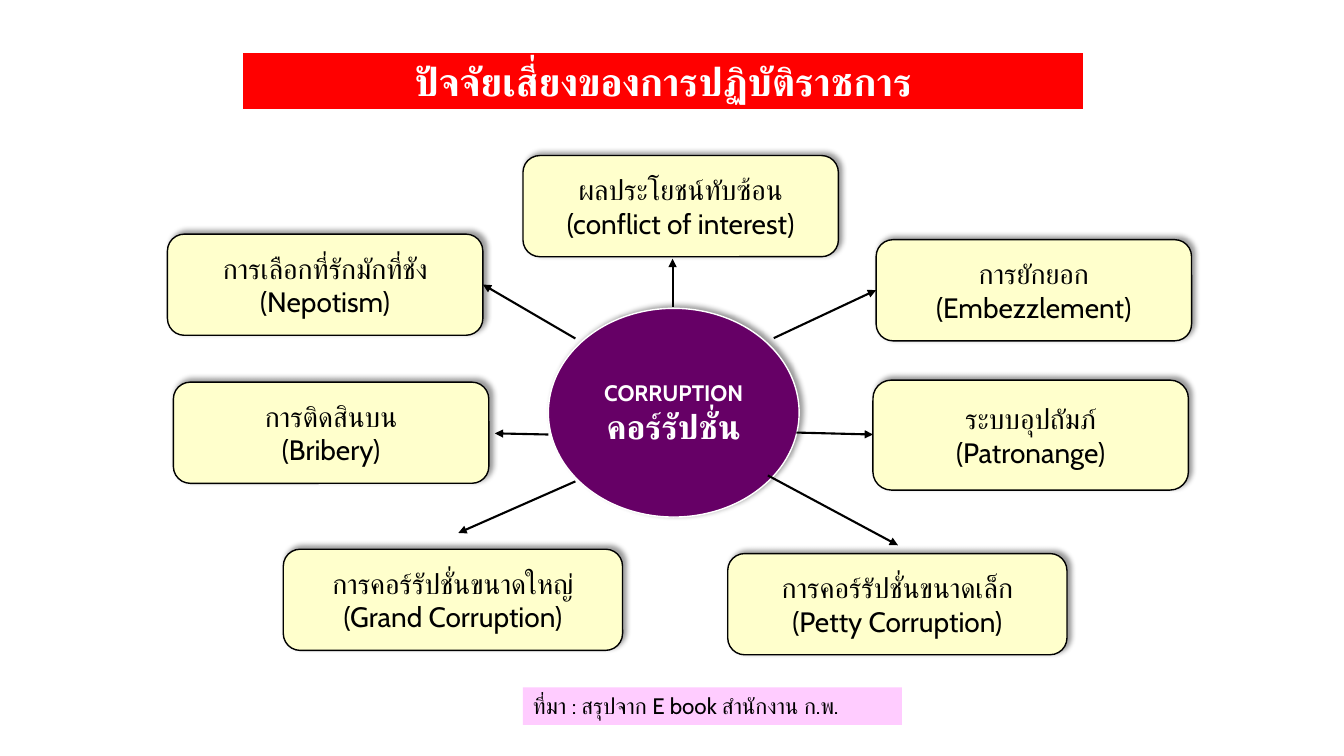
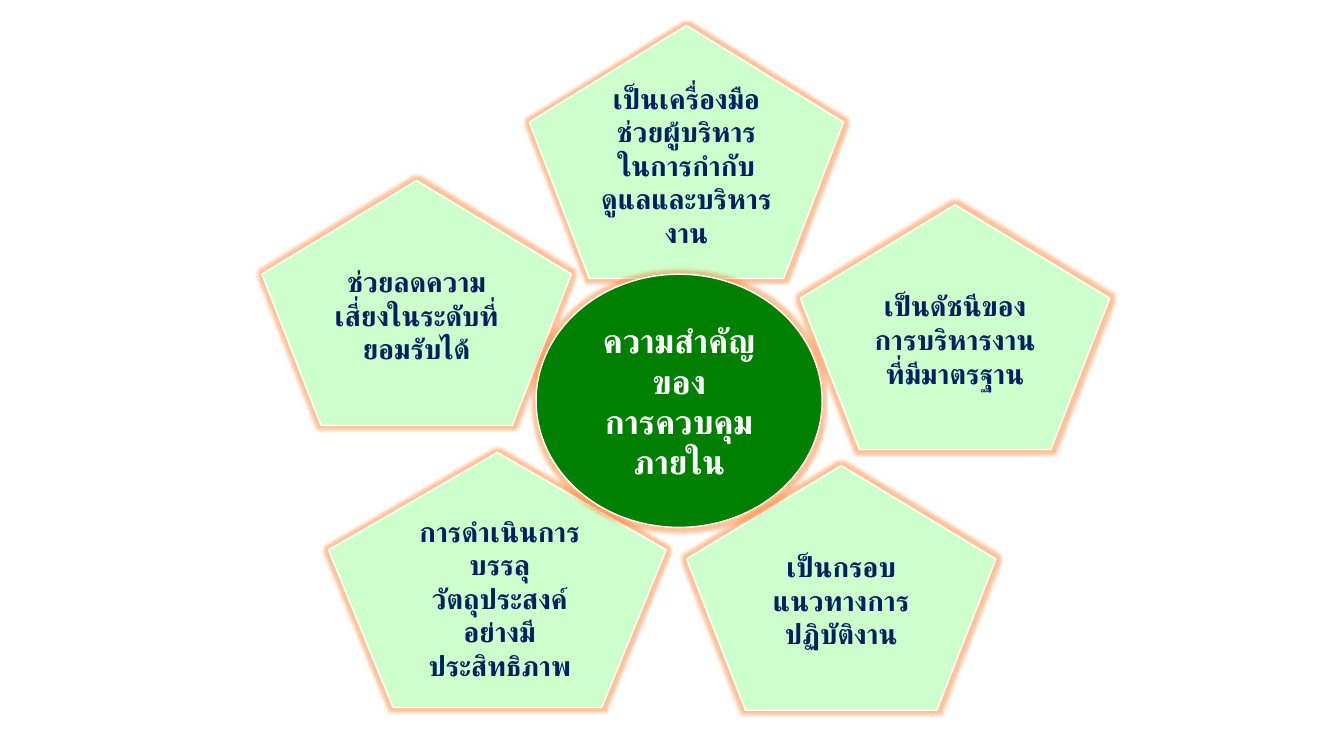
"""Two slides on corruption risks and the importance of internal control."""
from lxml.etree import SubElement
from pptx import Presentation
from pptx.dml.color import RGBColor
from pptx.enum.shapes import MSO_CONNECTOR, MSO_SHAPE
from pptx.enum.text import MSO_ANCHOR, PP_ALIGN
from pptx.oxml.ns import qn
from pptx.util import Cm, Pt

BLACK, WHITE, NAVY = "000000", "FFFFFF", "002060"
RED, PURPLE, PINK, CREAM = "FF0000", "660066", "FFCCFF", "FFFFCC"
GREEN, MINT, ORANGE = "008000", "CCFFCC", "FF6600"
SHADOW = ("outerShdw", BLACK, {"blurRad": Pt(4), "dist": Pt(3), "dir": 315 * 60000})
GLOW = ("glow", ORANGE, {"rad": Pt(5)})


def color(hex_string):
    return RGBColor.from_string(hex_string)


class Deck:
    font_name = "Cabin"

    def __init__(self):
        self.presentation = Presentation()
        self.presentation.slide_width = Cm(33.87)
        self.presentation.slide_height = Cm(19.05)
        self.slide = None

    def new_slide(self):
        self.slide = self.presentation.slides.add_slide(self.presentation.slide_layouts[6])

    def add_effect(self, shape, name, hex_string, attributes):
        effects = shape.element.spPr.find(qn("a:effectLst"))
        effect = SubElement(effects, qn(f"a:{name}"))
        for key, value in attributes.items():
            effect.set(key, str(value))
        tint = SubElement(effect, qn("a:srgbClr"), val=hex_string)
        SubElement(tint, qn("a:alpha"), val="40000")

    def add_shape(self, kind, box, fill, line=None, weight=1, effect=None):
        shape = self.slide.shapes.add_shape(kind, *map(Cm, box))
        shape.shadow.inherit = False
        shape.fill.solid()
        shape.fill.fore_color.rgb = color(fill)
        if line:
            shape.line.color.rgb = color(line)
            shape.line.width = Pt(weight)
        else:
            shape.line.fill.background()
        if effect:
            self.add_effect(shape, *effect)
        return shape

    def set_text(self, shape, lines, sizes, ink, bold=False,
                 align=PP_ALIGN.CENTER, anchor=MSO_ANCHOR.MIDDLE):
        frame = shape.text_frame
        frame.word_wrap = True
        frame.vertical_anchor = anchor
        frame.text = "\n".join(lines)
        for paragraph, size in zip(frame.paragraphs, sizes):
            paragraph.alignment = align
            font = paragraph.font
            font.name, font.size, font.bold = self.font_name, Pt(size), bold
            font.color.rgb = color(ink)

    def add_title(self, text, box):
        band = self.add_shape(MSO_SHAPE.RECTANGLE, box, RED, WHITE, 0.75)
        self.set_text(band, [text], [28], WHITE, True, anchor=MSO_ANCHOR.TOP)

    def add_source_note(self, text, box):
        band = self.add_shape(MSO_SHAPE.RECTANGLE, box, PINK)
        self.set_text(band, [text], [16], BLACK, align=PP_ALIGN.LEFT, anchor=MSO_ANCHOR.TOP)

    def add_hub(self, lines, sizes, box, fill, effect):
        oval = self.add_shape(MSO_SHAPE.OVAL, box, fill, WHITE, effect=effect)
        self.set_text(oval, lines, sizes, WHITE, True)

    def add_card(self, lines, left, top, width=7.95, height=2.55):
        card = self.add_shape(MSO_SHAPE.ROUNDED_RECTANGLE, (left, top, width, height),
                              CREAM, BLACK, effect=SHADOW)
        self.set_text(card, lines, [20, 20], BLACK)

    def add_arrow(self, start, end):
        arrow = self.slide.shapes.add_connector(
            MSO_CONNECTOR.STRAIGHT, *map(Cm, start + end))
        arrow.line.color.rgb = color(BLACK)
        arrow.line.width = Pt(1.5)
        properties = arrow.element.spPr
        SubElement(properties.find(qn("a:ln")), qn("a:tailEnd"), type="triangle")
        SubElement(properties, qn("a:effectLst"))

    def add_pentagon(self, lines, left, top, width=7.8, height=6.17):
        pentagon = self.add_shape(MSO_SHAPE.REGULAR_PENTAGON, (left, top, width, height),
                                  MINT, WHITE, effect=GLOW)
        if lines:
            self.set_text(pentagon, lines, [20] * len(lines), NAVY, True)
            pentagon.text_frame.margin_bottom = Cm(0.97)

    def add_text(self, lines, box):
        text_box = self.slide.shapes.add_textbox(*map(Cm, box))
        self.set_text(text_box, lines, [20] * len(lines), NAVY, True, anchor=MSO_ANCHOR.TOP)


def corruption_slide(deck):
    deck.new_slide()
    deck.add_title("ปัจจัยเสี่ยงของการปฏิบัติราชการ", (6.12, 1.32, 21.2, 1.45))
    deck.add_hub(["CORRUPTION", "คอร์รัปชั่น"], [16, 24],
                 (13.82, 7.77, 6.32, 5.26), PURPLE, SHADOW)
    for thai, english, *box in (
        ("การเลือกที่รักมักที่ชัง", "(Nepotism)", 4.22, 5.9),
        ("ผลประโยชน์ทับซ้อน", "(conflict of interest)", 13.18, 3.92),
        ("การยักยอก", "(Embezzlement)", 22.08, 6.04),
        ("การคอร์รัปชั่นขนาดใหญ่", "(Grand Corruption)", 7.14, 13.84, 8.55),
        ("การคอร์รัปชั่นขนาดเล็ก", "(Petty Corruption)", 18.34, 13.95, 8.55),
        ("การติดสินบน", "(Bribery)", 4.37, 9.63),
        ("ระบบอุปถัมภ์", "(Patronange)", 22, 9.58, 7.95, 2.77),
    ):
        deck.add_card([thai, english], *box)
    for start, end in (
        ((16.95, 7.73), (16.95, 6.52)),
        ((19.5, 8.52), (22.08, 7.31)),
        ((20.07, 10.9), (22, 10.95)),
        ((13.82, 10.95), (12.47, 10.92)),
        ((14.5, 8.53), (12.17, 7.17)),
        ((19.35, 11.98), (22.63, 13.74)),
        ((14.5, 12.13), (11.55, 13.43)),
    ):
        deck.add_arrow(start, end)
    deck.add_source_note("ที่มา : สรุปจาก E book สำนักงาน ก.พ.", (13.18, 17.32, 9.55, 0.95))


def control_slide(deck):
    deck.new_slide()
    for lines, *box in (
        (["ช่วยลดความเสี่ยงในระดับที่ยอมรับได้"], 6.6, 4.55),
        (["เป็นเครื่องมือช่วยผู้บริหาร", "ในการกำกับดูแลและบริหารงาน"], 13.34, 0.64, 7.92, 6.38),
        (["เป็นกรอบแนวทางการปฏิบัติงาน"], 17.3, 11.73),
        (["เป็นดัชนีของการบริหารงานที่มีมาตรฐาน"], 20.17, 5.16),
        ([], 8.28, 11.4, 8.51, 6.43),
    ):
        deck.add_pentagon(lines, *box)
    deck.add_text(["การดำเนินการ", "บรรลุวัตถุประสงค์อย่างมี", "ประสิทธิภาพ"],
                  (9.98, 12.83, 5.23, 4.52))
    deck.add_hub(["ความสำคัญของ", "การควบคุมภายใน"], [24, 24],
                 (13.51, 6.91, 7.21, 6.38), GREEN, GLOW)


def main():
    deck = Deck()
    corruption_slide(deck)
    control_slide(deck)
    deck.presentation.save("out.pptx")


if __name__ == "__main__":
    main()
